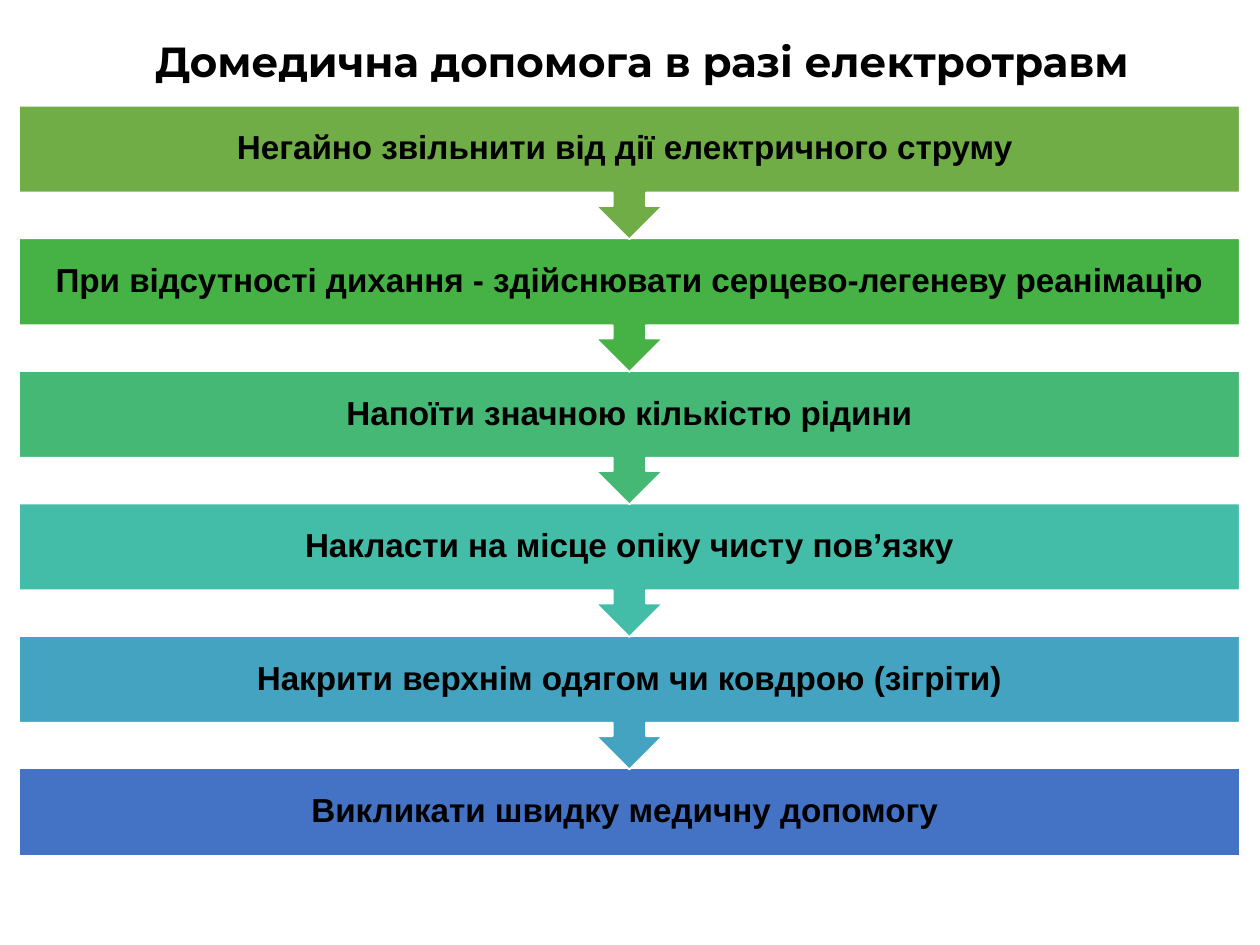
import pptx
import pptx.util
import pptx.dml.color
import pptx.enum.shapes
import pptx.enum.text
from dataclasses import dataclass

Inches = pptx.util.Inches
Pt = pptx.util.Pt
Color = pptx.dml.color.RGBColor.from_string
Shape = pptx.enum.shapes.MSO_SHAPE
Align = pptx.enum.text.PP_ALIGN
Anchor = pptx.enum.text.MSO_ANCHOR


@dataclass
class Theme:
    title_font: str = "Montserrat"
    step_font: str = "Arial"
    title_size: int = 24
    step_size: int = 19
    ink: str = "000000"
    paper: str = "FFFFFF"
    step_fills: tuple = ("70AD47", "46B246", "44B874", "43BDA7", "44A3C0", "4472C4")


class FirstAidSlide:
    def __init__(self, presentation, theme):
        self.theme = theme
        self.slide = presentation.slides.add_slide(presentation.slide_layouts[5])

    def format_text(self, frame, text, font, size):
        frame.text = text
        paragraph = frame.paragraphs[0]
        paragraph.alignment = Align.CENTER
        paragraph.font.name = font
        paragraph.font.size = Pt(size)
        paragraph.font.bold = True
        paragraph.font.color.rgb = Color(self.theme.ink)
        return paragraph

    def add_title(self, text, left, top, width, height):
        heading = self.slide.shapes.title
        heading.left, heading.top = Inches(left), Inches(top)
        heading.width, heading.height = Inches(width), Inches(height)
        frame = heading.text_frame
        frame.word_wrap = False
        frame.auto_size = pptx.enum.text.MSO_AUTO_SIZE.NONE
        frame.vertical_anchor = Anchor.TOP
        self.format_text(frame, text, self.theme.title_font, self.theme.title_size)

    def add_step(self, text, fill, preset, left, top, width, height):
        step = self.slide.shapes.add_shape(
            preset, Inches(left), Inches(top), Inches(width), Inches(height)
        )
        step.shadow.inherit = False
        step.fill.solid()
        step.fill.fore_color.rgb = Color(fill)
        step.line.color.rgb = Color(self.theme.paper)
        step.line.width = Pt(1)
        frame = step.text_frame
        frame.word_wrap = True
        frame.vertical_anchor = Anchor.MIDDLE
        frame.margin_left = frame.margin_right = Inches(0.15)
        frame.margin_top = frame.margin_bottom = Inches(0.15)
        paragraph = self.format_text(
            frame, text, self.theme.step_font, self.theme.step_size
        )
        paragraph.line_spacing = 0.9


def main():
    presentation = pptx.Presentation()
    presentation.slide_width = Inches(10)
    presentation.slide_height = Inches(7.5)
    theme = Theme()
    page = FirstAidSlide(presentation, theme)
    page.add_title("Домедична допомога в разі електротравм", 0.97, 0.23, 8.25, 0.5)

    steps = (
        "Негайно звільнити від дії електричного струму ",
        "При відсутності дихання - здійснювати серцево-легеневу реанімацію",
        "Напоїти значною кількістю рідини",
        "Накласти на місце опіку чисту пов’язку",
        "Накрити верхнім одягом чи ковдрою (зігріти)",
        "Викликати швидку медичну допомогу ",
    )
    first_top, pitch = 0.84, 1.052
    last = len(steps) - 1
    for index in reversed(range(len(steps))):
        preset, height = Shape.DOWN_ARROW_CALLOUT, 1.06
        if index == last:
            preset, height = Shape.RECTANGLE, 0.69
        page.add_step(
            steps[index], theme.step_fills[index], preset,
            0.15, first_top + index * pitch, 9.69, height,
        )
    presentation.save("out.pptx")


if __name__ == "__main__":
    main()
